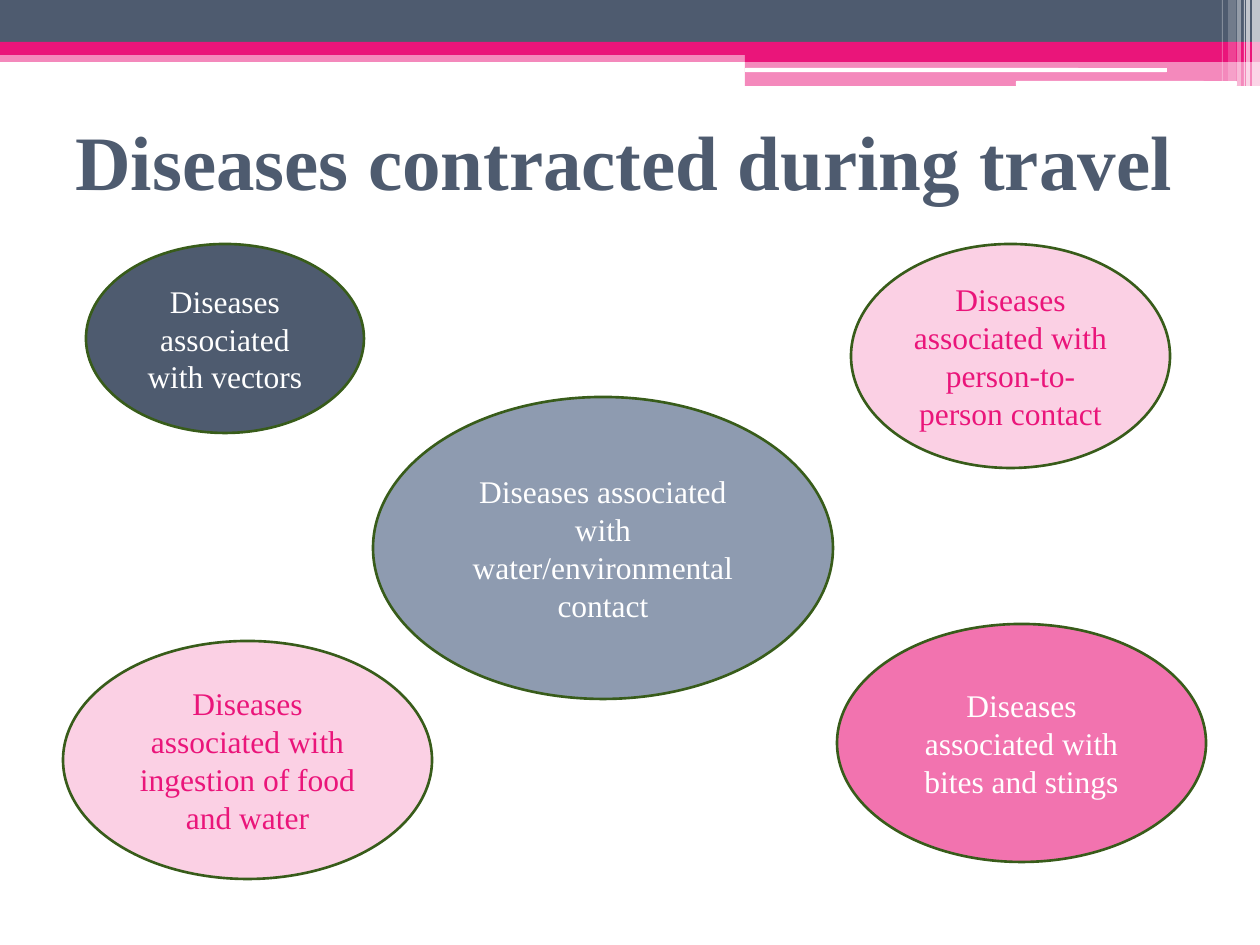
"""Build a slide of five ovals naming the kinds of diseases contracted during travel."""
import pptx
import pptx.util
import pptx.dml.color
import pptx.enum.shapes
import pptx.enum.text
import pptx.oxml.ns
import lxml.etree

PX = 914400 / 126
SHAPE = pptx.enum.shapes.MSO_SHAPE
NAVY, PINK, PALE, WHITE, GREEN = "4E5B6F", "EA157A", "FBD0E4", "FFFFFF", "385C1A"


def paint(fmt, color, alpha=100):
    fmt.solid()
    fmt.fore_color.rgb = pptx.dml.color.RGBColor.from_string(color)
    if alpha < 100:
        clr = fmt._xPr.find(".//" + pptx.oxml.ns.qn("a:srgbClr"))
        lxml.etree.SubElement(clr, pptx.oxml.ns.qn("a:alpha"), val=str(alpha * 1000))


def write(sp, text, size, color, bold, align):
    tf = sp.text_frame
    tf.word_wrap = True
    tf.vertical_anchor = pptx.enum.text.MSO_ANCHOR.MIDDLE
    p = tf.paragraphs[0]
    p.alignment = align
    r = p.add_run()
    r.text = text
    font = {"name": "Times New Roman", "size": pptx.util.Pt(size), "bold": bold}
    for key, value in font.items():
        setattr(r.font, key, value)
    paint(r.font.fill, color)


prs = pptx.Presentation()
prs.slide_width, prs.slide_height = round(1260 * PX), round(945 * PX)
s = prs.slides.add_slide(prs.slide_layouts[6])

bands = [
    (SHAPE.RECTANGLE, 0, 50, 1260, 12, PINK, 50),
    (SHAPE.RECTANGLE, 0, 0, 1260, 42, NAVY, 100),
    (SHAPE.RECTANGLE, 0, 42, 1260, 13, PINK, 100),
    (SHAPE.RECTANGLE, 745, 49, 515, 13, PINK, 100),
    (SHAPE.RECTANGLE, 745, 62, 515, 24, PINK, 50),
    (SHAPE.ROUNDED_RECTANGLE, 745, 68, 422, 4, WHITE, 100),
    (SHAPE.ROUNDED_RECTANGLE, 1016, 81, 221, 5, WHITE, 100),
]
stripes = [
    (1252, 8, 86, 65), (1246, 4, 86, 65), (1244, 1, 86, 60),
    (1237, 4, 86, 40), (1228, 8, 81, 20), (1222, 1, 81, 30),
]
bands += [(SHAPE.RECTANGLE, x, 0, w, h, WHITE, alpha) for x, w, h, alpha in stripes]
for kind, x, y, w, h, color, alpha in bands:
    sp = s.shapes.add_shape(kind, *(round(n * PX) for n in (x, y, w, h)))
    sp.shadow.inherit = False
    sp.line.fill.background()
    paint(sp.fill, color, alpha)

title = s.shapes.add_textbox(*(round(n * PX) for n in (63, 86, 1134, 147)))
write(title, "Diseases contracted during travel", 44, NAVY, True, pptx.enum.text.PP_ALIGN.LEFT)

ovals = [
    (86, 244, 278, 189, NAVY, WHITE, "vectors"),
    (851, 244, 319, 224, PALE, PINK, "person-to-person contact"),
    (63, 641, 369, 238, PALE, PINK, "ingestion of food and water"),
    (373, 397, 460, 302, "8E9BB0", WHITE, "water/environmental contact"),
    (837, 624, 369, 238, "F273AF", WHITE, "bites and stings"),
]
for x, y, w, h, fill, color, cause in ovals:
    sp = s.shapes.add_shape(SHAPE.OVAL, *(round(n * PX) for n in (x, y, w, h)))
    sp.shadow.inherit = False
    paint(sp.fill, fill)
    paint(sp.line.fill, GREEN)
    sp.line.width = pptx.util.Pt(1.5)
    write(sp, "Diseases associated with " + cause, 18, color, False, pptx.enum.text.PP_ALIGN.CENTER)

prs.save("out.pptx")
